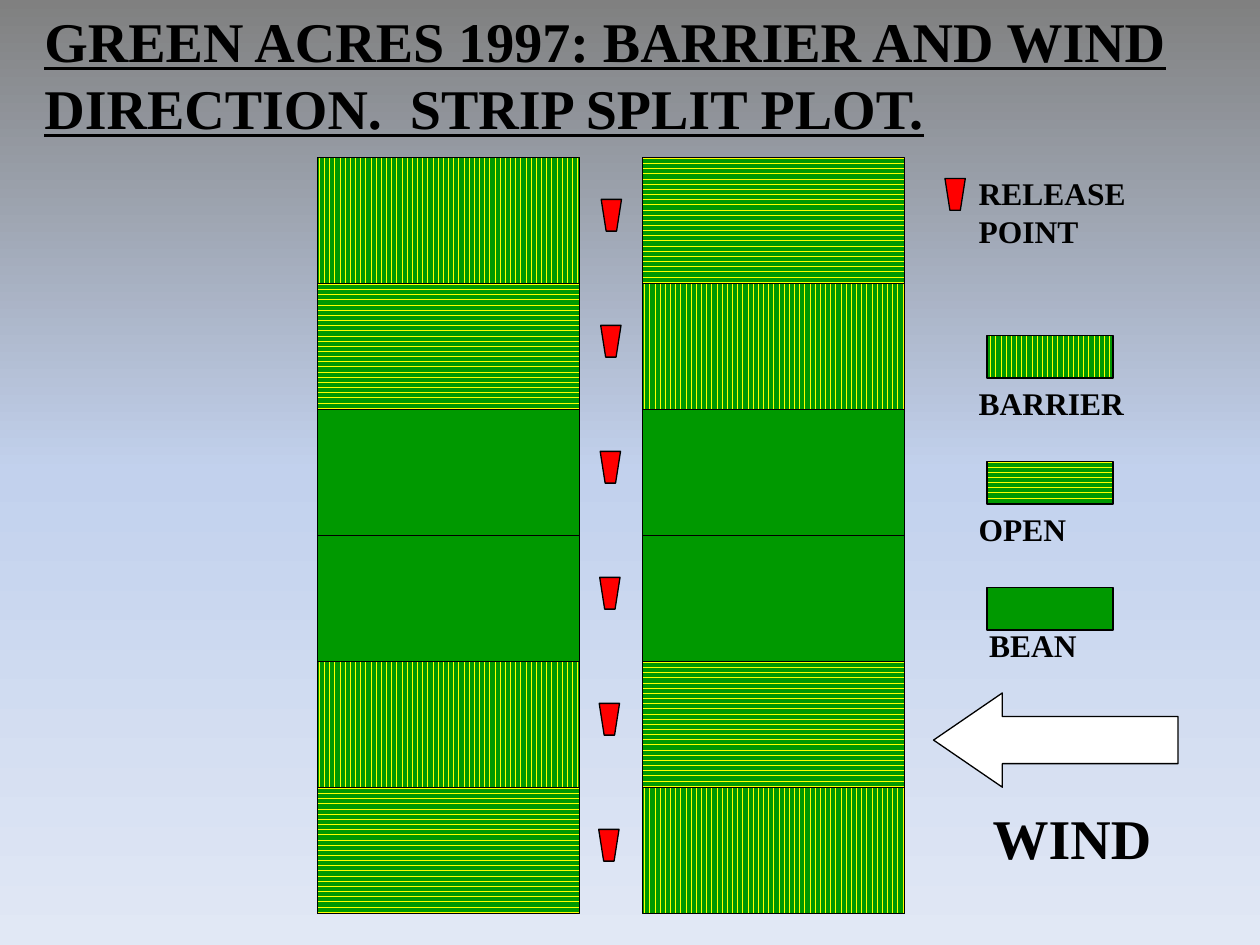
from copy import deepcopy

from pptx import Presentation
from pptx.dml.color import RGBColor
from pptx.enum.dml import MSO_PATTERN as Pat
from pptx.enum.shapes import MSO_SHAPE as Shape
from pptx.enum.text import MSO_ANCHOR as Anchor, MSO_AUTO_SIZE as Auto, PP_ALIGN as Align
from pptx.oxml.ns import qn
from pptx.util import Cm, Pt

BLACK = RGBColor(0x00, 0x00, 0x00)
WHITE = RGBColor(0xFF, 0xFF, 0xFF)
GREEN = RGBColor(0x00, 0x99, 0x00)
YELLOW = RGBColor(0xFF, 0xFF, 0x00)
RED = RGBColor(0xFF, 0x00, 0x00)
SKY = [(0, RGBColor(0x80, 0x80, 0x80)),
       (0.5, RGBColor(0xC2, 0xD1, 0xED)),
       (1, RGBColor(0xE1, 0xE8, 0xF5))]
FONT = "Times New Roman"

TITLE = "GREEN ACRES 1997: BARRIER AND WIND DIRECTION.  STRIP SPLIT PLOT."
HATCH = {"barrier": Pat.DARK_VERTICAL, "open": Pat.DARK_HORIZONTAL, "bean": None}
STRIPS = [
    (6.4, ["barrier", "open", "bean", "bean", "barrier", "open"]),
    (12.95, ["open", "barrier", "bean", "bean", "open", "barrier"]),
]
KEY = ["barrier", "open", "bean"]
LABELS = [  # text, size, left, top, width, height
    ("RELEASE POINT", 18, 19.48, 3.38, 4.65, 1.8),
    ("BARRIER", 18, 19.48, 7.62, 4.88, 1.02),
    ("OPEN", 18, 19.48, 10.16, 5.5, 1.02),
    ("BEAN", 18, 19.69, 12.5, 3.18, 1.02),
    ("WIND", 32, 19.76, 16.08, 4.45, 1.6),
]

STEP = 2.54  # pitch of plots, release points and key boxes
TOP = 3.18
PLOT_W = 5.28


def style(shape):
    shape.shadow.inherit = False
    shape.line.color.rgb = BLACK
    shape.line.width = Pt(0.75)


def paint(shape, color):
    style(shape)
    shape.fill.solid()
    shape.fill.fore_color.rgb = color


def plot(slide, crop, x, y, w, h):
    box = slide.shapes.add_shape(Shape.RECTANGLE, Cm(x), Cm(y), Cm(w), Cm(h))
    paint(box, GREEN)
    if HATCH[crop]:
        box.fill.patterned()
        box.fill.pattern = HATCH[crop]
        box.fill.fore_color.rgb = GREEN
        box.fill.back_color.rgb = YELLOW


def release(slide, x, y, w=0.41, h=0.64, inset=0.1):
    """Draw a release point: a red cup, narrow at the bottom."""
    pen = slide.shapes.build_freeform(Cm(x), Cm(y))
    pen.add_line_segments([(Cm(x + inset), Cm(y + h)),
                           (Cm(x + w - inset), Cm(y + h)),
                           (Cm(x + w), Cm(y))], close=True)
    paint(pen.convert_to_shape(), RED)


def write(frame, text, size, under=None):
    frame.word_wrap = True
    frame.auto_size = Auto.NONE
    frame.vertical_anchor = Anchor.TOP
    para = frame.paragraphs[0]
    para.alignment = Align.LEFT
    run = para.add_run()
    run.text = text
    font = run.font
    font.name, font.size, font.bold = FONT, Pt(size), True
    font.underline = under
    font.color.rgb = BLACK


def backdrop(slide):
    fill = slide.background.fill
    fill.gradient()
    fill.gradient_angle = 270
    stops = slide.element.find(".//" + qn("a:gsLst"))
    stops.insert(1, deepcopy(stops[0]))
    for stop, (pos, color) in zip(fill.gradient_stops, SKY):
        stop.position = pos
        stop.color.rgb = color


def main():
    deck = Presentation()
    deck.slide_width, deck.slide_height = Cm(25.4), Cm(19.05)
    slide = deck.slides.add_slide(deck.slide_layouts[5])
    backdrop(slide)

    title = slide.shapes.title
    title.left, title.top = Cm(0.64), Cm(0)
    title.width, title.height = Cm(23.5), Cm(2.97)
    write(title.text_frame, TITLE, 32, under=True)

    for x, crops in STRIPS:
        for row, crop in enumerate(crops):
            plot(slide, crop, x, TOP + row * STEP, PLOT_W, STEP)

    for row in range(len(STRIPS[0][1])):
        release(slide, 12.12 - row * 0.01, TOP + 0.84 + row * STEP)
    release(slide, 19.05, 3.6)

    for row, crop in enumerate(KEY):
        plot(slide, crop, 19.9, 6.77 + row * STEP, 2.54, 0.85)

    arrow = slide.shapes.add_shape(Shape.LEFT_ARROW, Cm(18.82), Cm(13.97), Cm(4.93), Cm(1.9))
    arrow.adjustments[0], arrow.adjustments[1] = 0.5, 0.73
    paint(arrow, WHITE)

    for text, size, *place in LABELS:
        box = slide.shapes.add_textbox(*map(Cm, place))
        write(box.text_frame, text, size)

    deck.save("out.pptx")


if __name__ == "__main__":
    main()
